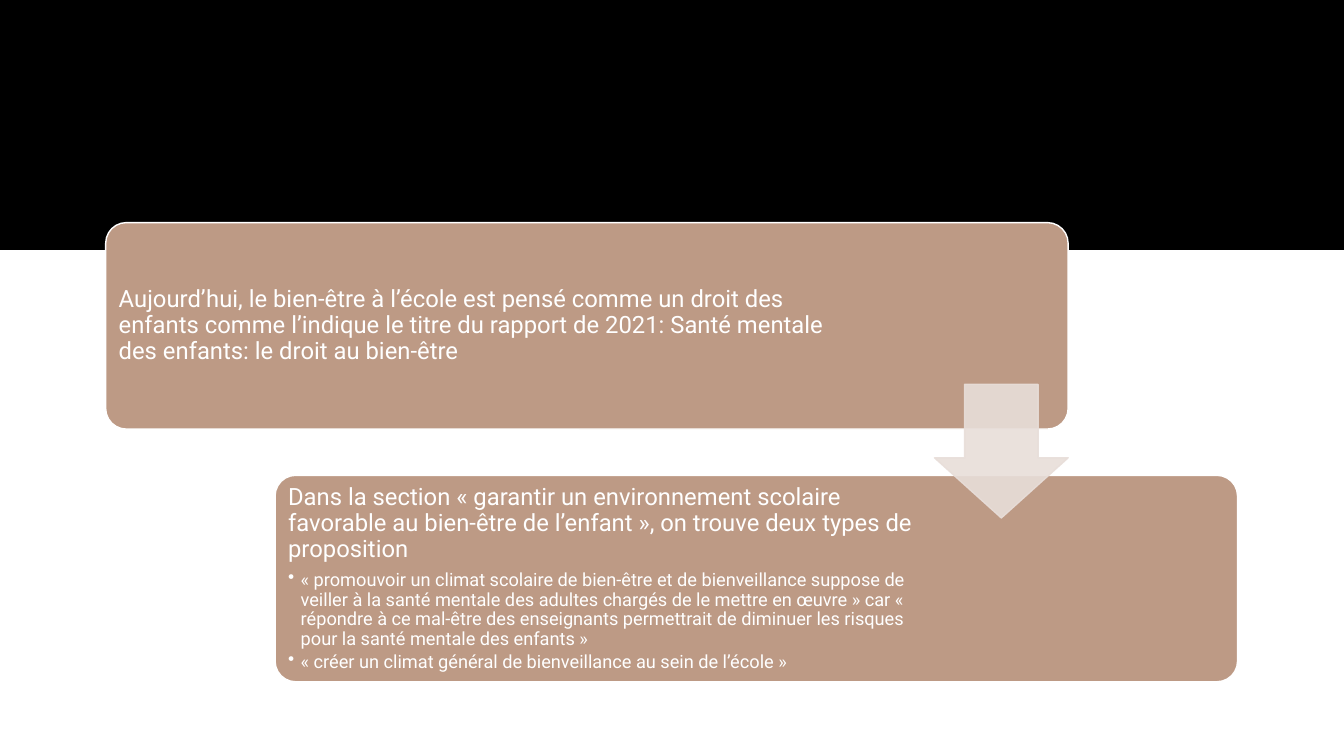
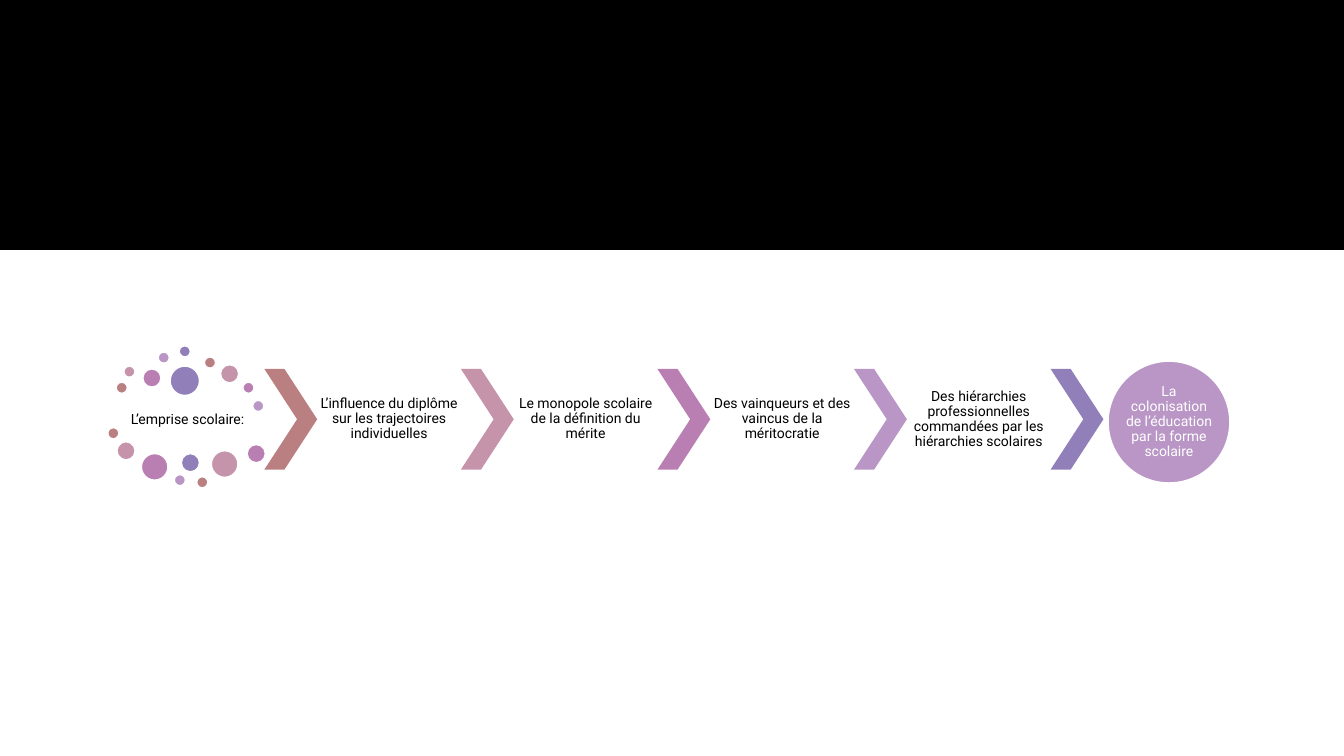
import itertools

import pptx
import pptx.dml.color
import pptx.enum.shapes
import pptx.enum.text
import pptx.oxml.ns
import pptx.util
from lxml import etree

Pt = pptx.util.Pt
SHAPE = pptx.enum.shapes.MSO_SHAPE
ALIGN = pptx.enum.text.PP_ALIGN

FONT = "Roboto"
COLOURS = {
    "black": "000000",
    "white": "FFFFFF",
    "card": "BD9A85",
    "arrow": "E8DED9",
    "brick": "BA7F81",
    "rose": "C594AA",
    "magenta": "BA7FB2",
    "lilac": "B996C6",
    "violet": "917FBA",
}
STEP_COLOURS = ["brick", "rose", "magenta", "lilac", "violet"]

RIGHTS_CARDS = [
    [("Aujourd’hui, le bien-être à l’école est pensé comme un droit des enfants comme l’indique "
      "le titre du rapport de 2021: Santé mentale des enfants: le droit au bien-être", False)],
    [("Dans la section « garantir un environnement scolaire favorable au bien-être de l’enfant », "
      "on trouve deux types de proposition", False),
     ("« promouvoir un climat scolaire de bien-être et de bienveillance suppose de veiller à la "
      "santé mentale des adultes chargés de le mettre en œuvre » car « répondre à ce mal-être des "
      "enseignants permettrait de diminuer les risques pour la santé mentale des enfants »", True),
     ("« créer un climat général de bienveillance au sein de l’école »", True)],
]
GRIP_TITLE = "L’emprise scolaire:"
GRIP_STEPS = [
    "L’influence du diplôme sur les trajectoires individuelles",
    "Le monopole scolaire de la définition du mérite",
    "Des vainqueurs et des vaincus de la méritocratie",
    "Des hiérarchies professionnelles commandées par les hiérarchies scolaires",
]
GRIP_RESULT = "La colonisation de l’éducation par la forme scolaire"
DOTS = [
    (6, 26, 8), (11.5, 14.5, 8), (25, 16.5, 13), (36, 4.5, 8), (51, 0, 8), (69, 8, 8),
    (80.5, 13.5, 13), (96.5, 26, 8), (103.5, 39, 8), (44.5, 14.5, 21), (0, 58.5, 8),
    (6.5, 68.5, 13), (24, 77, 19), (47.5, 92, 8), (52.5, 77, 13), (63.5, 93.5, 8),
    (74, 75, 19), (99.5, 70.5, 13),
]


def rgb(name):
    return pptx.dml.color.RGBColor.from_string(COLOURS[name])


def add_block(slide, kind, box, fill, outline=None, adjustments=()):
    block = slide.shapes.add_shape(kind, *map(Pt, box))
    block.shadow.inherit = False
    block.fill.solid()
    block.fill.fore_color.rgb = rgb(fill)
    if outline:
        block.line.color.rgb = rgb(outline)
        block.line.width = Pt(1)
    else:
        block.line.fill.background()
    for index, value in enumerate(adjustments):
        block.adjustments[index] = value
    return block


def prepare_frame(frame, margin, right_margin=None):
    frame.word_wrap = True
    frame.vertical_anchor = pptx.enum.text.MSO_ANCHOR.MIDDLE
    frame.margin_left = frame.margin_top = frame.margin_bottom = Pt(margin)
    frame.margin_right = Pt(margin if right_margin is None else right_margin)


def write_paragraph(paragraph, text, size, colour, align, space_after):
    paragraph.text = text
    paragraph.alignment = align
    paragraph.line_spacing = 0.9
    paragraph.space_after = Pt(space_after)
    for run in paragraph.runs:
        run.font.name = FONT
        run.font.size = Pt(size)
        run.font.color.rgb = rgb(colour)


def add_bullet(paragraph):
    properties = paragraph._p.get_or_add_pPr()
    properties.set("marL", str(Pt(9)))
    properties.set("indent", str(Pt(-9)))
    etree.SubElement(properties, pptx.oxml.ns.qn("a:buChar")).set("char", "•")


def make_translucent(block, percent):
    for colour in block._element.spPr.iter(pptx.oxml.ns.qn("a:srgbClr")):
        etree.SubElement(colour, pptx.oxml.ns.qn("a:alpha")).set("val", str(percent * 1000))


def add_label(slide, box, text):
    label = slide.shapes.add_textbox(*map(Pt, box))
    prepare_frame(label.text_frame, 0.75)
    write_paragraph(label.text_frame.paragraphs[0], text, 10, "black", ALIGN.CENTER, 3.5)


def add_banded_slide(deck):
    slide = deck.slides.add_slide(deck.slide_layouts[6])
    add_block(slide, SHAPE.RECTANGLE, (0, 0, 960, 178.5), "black")
    return slide


def add_card(slide, box, entries, right_margin):
    card = add_block(slide, SHAPE.ROUNDED_RECTANGLE, box, "card", "white", [0.1])
    frame = card.text_frame
    prepare_frame(frame, 5, right_margin)
    for index, (text, bulleted) in enumerate(entries):
        paragraph = frame.add_paragraph() if index else frame.paragraphs[0]
        size, space_after = (13, 2) if bulleted else (17, 6)
        write_paragraph(paragraph, text, size, "white", ALIGN.LEFT, space_after)
        if bulleted:
            add_bullet(paragraph)


def add_card_cascade(slide, left, top):
    width, height = 687.5, 147.5
    for index, (entries, right_margin) in enumerate(zip(RIGHTS_CARDS, (149, 222.5))):
        box = (left + index * 121, top + index * 180.5, width, height)
        add_card(slide, box, entries, right_margin)
    arrow_size = 95.5
    arrow_box = (left + width - arrow_size, top + 115.5, arrow_size, arrow_size)
    arrow = add_block(slide, SHAPE.DOWN_ARROW, arrow_box, "arrow", "arrow")
    arrow.adjustments[0] = 0.55
    arrow.adjustments[1] = 0.45
    make_translucent(arrow, 90)


def add_dot_cloud(slide, left, top):
    add_label(slide, (left + 6, top + 36, 102, 34), GRIP_TITLE)
    for (x, y, diameter), colour in zip(DOTS, itertools.cycle(STEP_COLOURS)):
        box = (left + x, top + y, diameter, diameter)
        add_block(slide, SHAPE.OVAL, box, colour, "white")


def add_step_chain(slide, left, top):
    pitch, chevron_width, height = 140.4, 37.8, 72
    for index, colour in enumerate(STEP_COLOURS):
        box = (left + index * pitch, top, chevron_width, height)
        add_block(slide, SHAPE.CHEVRON, box, colour, adjustments=[0.62])
    for index, text in enumerate(GRIP_STEPS):
        label_left = left + index * pitch + chevron_width
        add_label(slide, (label_left, top, pitch - chevron_width, height), text)


def add_result(slide, left, top, diameter):
    box = (left, top, diameter, diameter)
    result = add_block(slide, SHAPE.OVAL, box, "lilac", "white")
    prepare_frame(result.text_frame, 0)
    write_paragraph(result.text_frame.paragraphs[0], GRIP_RESULT, 10, "white", ALIGN.CENTER, 3.5)


def main():
    deck = pptx.Presentation()
    deck.slide_width, deck.slide_height = Pt(960), Pt(540)

    rights = add_banded_slide(deck)
    add_card_cascade(rights, 75.5, 159)

    grip = add_banded_slide(deck)
    add_dot_cloud(grip, 77, 247)
    add_step_chain(grip, 188.8, 263.5)
    add_result(grip, 791.5, 258, 87)

    deck.save("out.pptx")


if __name__ == "__main__":
    main()
